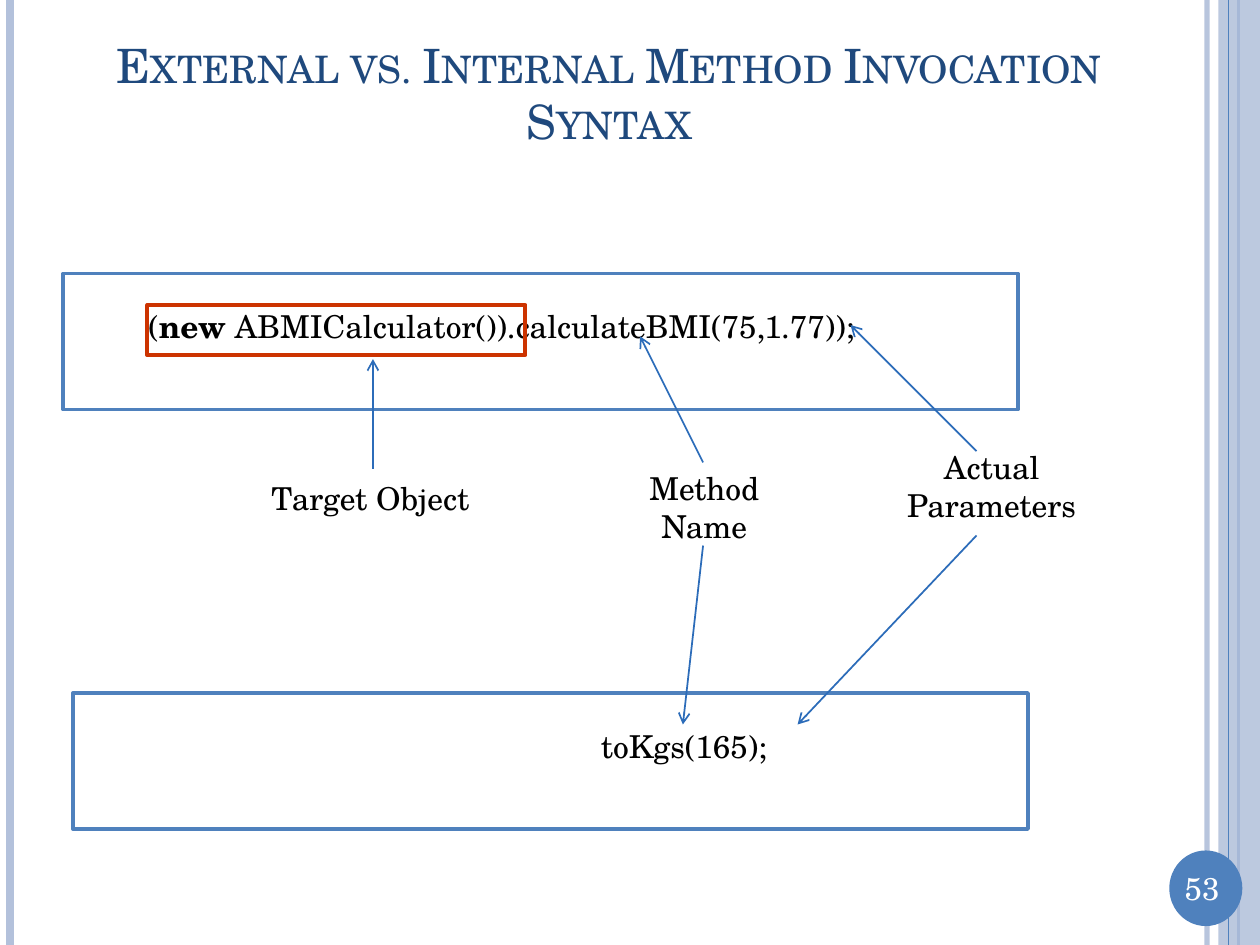
from lxml import etree
from pptx import Presentation
from pptx.dml.color import RGBColor
from pptx.enum.shapes import MSO_CONNECTOR, MSO_SHAPE
from pptx.enum.text import MSO_ANCHOR, PP_ALIGN
from pptx.oxml.ns import qn
from pptx.util import Inches, Pt

STRAIGHT = MSO_CONNECTOR.STRAIGHT
RECT, OVAL = MSO_SHAPE.RECTANGLE, MSO_SHAPE.OVAL
LEFT, CENTER = PP_ALIGN.LEFT, PP_ALIGN.CENTER
MIDDLE = MSO_ANCHOR.MIDDLE

FONT = "TeX Gyre Schola"
COLORS = {
    "band": "B3C1DB",
    "accent": "4F81BD",
    "arrow": "2C6CB9",
    "title": "1F497D",
    "highlight": "CC3300",
    "text": "000000",
    "white": "FFFFFF",
}


def rgb(name):
    return RGBColor.from_string(COLORS[name])


def set_alpha(fill_parent, percent):
    color = fill_parent.find(qn("a:solidFill"))[0]
    etree.SubElement(color, qn("a:alpha"), val=str(percent * 1000))


def add_line(s, start, end, color, width, arrow=False):
    c = s.shapes.add_connector(STRAIGHT, *map(Inches, (*start, *end)))
    c.line.color.rgb = rgb(color)
    c.line.width = Pt(width)
    if arrow:
        etree.SubElement(c.line._get_or_add_ln(), qn("a:tailEnd"), type="arrow")
    etree.SubElement(c._element.spPr, qn("a:effectLst"))
    return c


def add_box(s, kind, box, fill=None, line=None, width=1):
    sp = s.shapes.add_shape(kind, *map(Inches, box))
    sp.shadow.inherit = False
    if fill:
        sp.fill.solid()
        sp.fill.fore_color.rgb = rgb(fill)
    else:
        sp.fill.background()
    if line:
        sp.line.color.rgb = rgb(line)
        sp.line.width = Pt(width)
    else:
        sp.line.fill.background()
    return sp


def add_text(s, box, runs, color="text", size=18, align=CENTER):
    """Add one paragraph of (text, bold) runs and return it."""
    tf = s.shapes.add_textbox(*map(Inches, box)).text_frame
    tf.word_wrap = True
    tf.vertical_anchor = MIDDLE
    p = tf.paragraphs[0]
    p.alignment = align
    p.font.name = FONT
    p.font.size = Pt(size)
    p.font.color.rgb = rgb(color)
    for text, bold in runs:
        r = p.add_run()
        r.text = text
        if bold:
            r.font.bold = True
    return p


def add_side_bands(s, left, top, width, height):
    def rule(x, color, weight):
        return add_line(s, (left + x, top), (left + x, top + height), color, weight)

    inner = rule(width - 0.42, "band", 3)
    set_alpha(inner.line._get_or_add_ln(), 93)
    rule(0.08, "band", 4.5)
    rule(width - 0.17, "accent", 1.5)
    band = add_box(s, RECT, (left + width - 0.33, top, 0.33, height), "band")
    set_alpha(band._element.spPr, 87)
    rule(width - 0.25, "accent", 0.75)


def add_page_number(s, left, top, number):
    add_box(s, OVAL, (left, top, 0.58, 0.6), "accent")
    add_text(s, (left - 0.03, top + 0.1, 0.58, 0.4), [(number, False)], "white")


def add_title(s, box, text):
    p = add_text(s, box, [(text, False)], "title", 27)
    p.runs[0]._r.get_or_add_rPr().set("cap", "small")


def add_code_panel(s, left, top, text_x, text_width, runs):
    add_box(s, RECT, (left, top, 7.58, 1.08), "white", "accent", 2)
    add_text(s, (left + text_x, top + 0.17, text_width, 0.5), runs, align=LEFT)


def add_callout(s, box, text, arrows):
    """Add a label and its arrows, each given as (start, end)."""
    add_text(s, box, [(text, False)])
    for start, end in arrows:
        add_line(s, start, end, "arrow", 1, arrow=True)


def main():
    prs = Presentation()
    prs.slide_width, prs.slide_height = Inches(10), Inches(7.5)
    s = prs.slides.add_slide(prs.slide_layouts[6])

    add_side_bands(s, 0, 0, 10, 7.5)
    add_page_number(s, 9.28, 6.75, "53")
    add_title(s, (0.5, 0.3, 8.67, 0.87),
              "External vs. Internal Method Invocation Syntax")

    add_code_panel(s, 0.5, 2.17, 0.58, 6.88, [
        ("(", False), ("new", True),
        (" ABMICalculator()).calculateBMI(75,1.77));", False)])
    add_box(s, RECT, (1.17, 2.42, 3, 0.4), line="highlight", width=2.25)
    add_code_panel(s, 0.58, 5.5, 4.09, 2.28, [("toKgs(165);", False)])

    add_callout(s, (1.5, 3.75, 2.88, 0.4), "Target Object",
                [((2.96, 3.72), (2.96, 2.85))])
    add_callout(s, (4.92, 3.67, 1.34, 0.71), "Method Name",
                [((5.58, 3.67), (5.08, 2.67)), ((5.58, 4.33), (5.42, 5.75))])
    add_callout(s, (6.83, 3.5, 2.08, 0.71), "Actual Parameters",
                [((7.75, 3.58), (6.75, 2.58)), ((7.75, 4.25), (6.33, 5.75))])

    prs.save("out.pptx")


if __name__ == "__main__":
    main()
